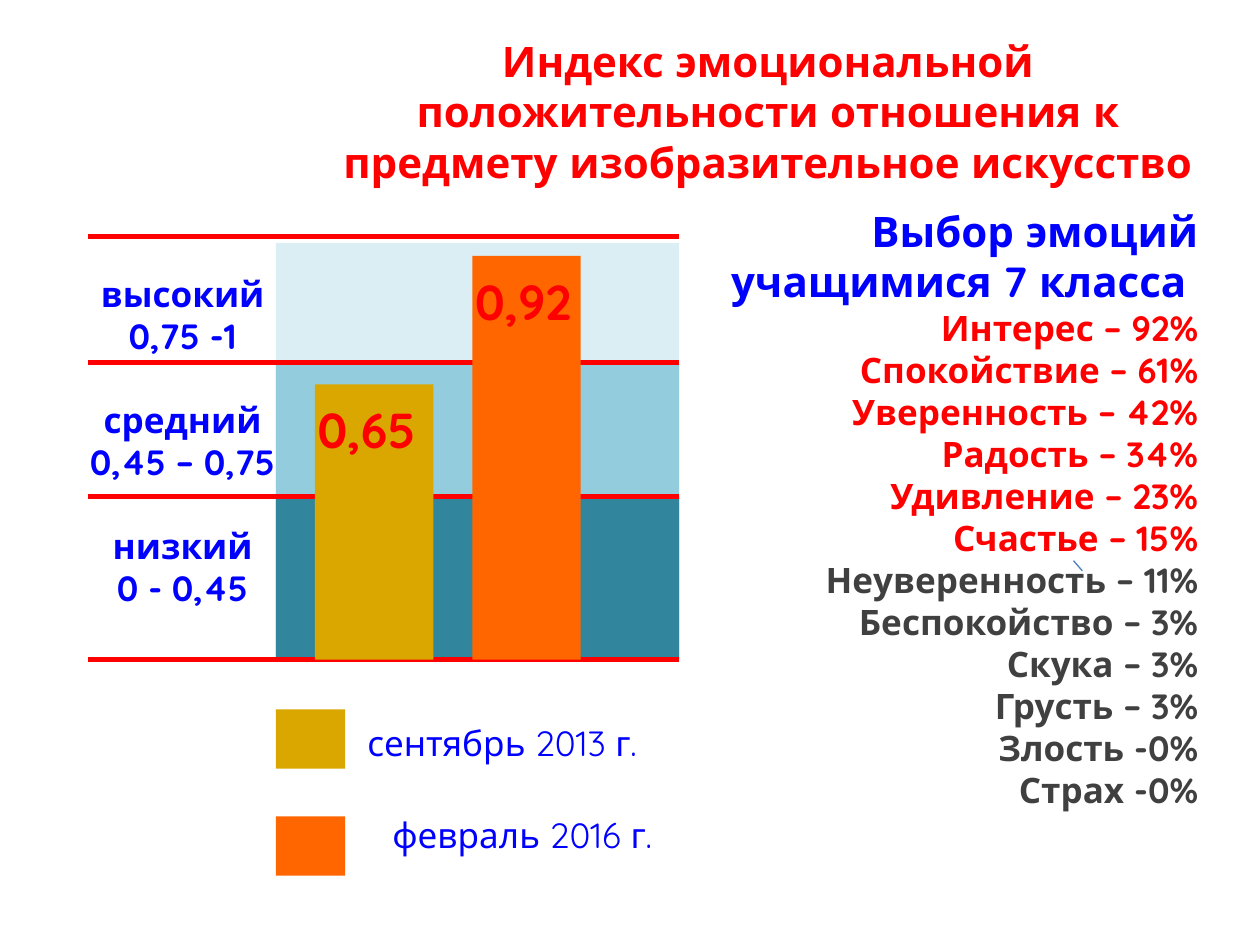
from lxml import etree
from pptx import Presentation
from pptx.dml.color import RGBColor
from pptx.enum.shapes import MSO_CONNECTOR, MSO_SHAPE
from pptx.enum.text import MSO_ANCHOR, MSO_AUTO_SIZE, PP_ALIGN
from pptx.oxml.ns import qn
from pptx.util import Inches, Pt

LEFT, CENTER, RIGHT = PP_ALIGN.LEFT, PP_ALIGN.CENTER, PP_ALIGN.RIGHT
TOP, NO_FIT = MSO_ANCHOR.TOP, MSO_AUTO_SIZE.NONE
RECTANGLE, STRAIGHT = MSO_SHAPE.RECTANGLE, MSO_CONNECTOR.STRAIGHT

THEME = {
    "font": "Quicksand",
    "red": "FF0000", "blue": "0000FF", "gray": "404040", "mark": "4B7EBC",
    "high": "DBEEF4", "middle": "93CDDD", "low": "31859C",
    "september": "DAA600", "february": "FF6600",
    "heading": 24, "text": 20, "value": 28,
}

presentation = Presentation()
presentation.slide_width, presentation.slide_height = Inches(10), Inches(7.5)
slide = presentation.slides.add_slide(presentation.slide_layouts[1])

# Grid of 100 columns by 75 rows
COLUMN = presentation.slide_width // 100
ROW = presentation.slide_height // 75


def write(shape, box, lines, align):
    """Place a text shape and fill it with (text, size, color, bold, gap) lines."""
    shape.left, shape.width = int(box[0] * COLUMN), int(box[2] * COLUMN)
    shape.top, shape.height = int(box[1] * ROW), int(box[3] * ROW)
    frame = shape.text_frame
    frame.word_wrap, frame.auto_size, frame.vertical_anchor = True, NO_FIT, TOP
    for number, (text, size, color, bold, gap) in enumerate(lines):
        paragraph = frame.add_paragraph() if number else frame.paragraphs[0]
        properties = paragraph._p.get_or_add_pPr()
        properties.set("marL", "0")
        properties.set("indent", "0")
        etree.SubElement(properties, qn("a:buNone"))
        paragraph.alignment = align
        paragraph.space_before = Pt(gap)
        run = paragraph.add_run()
        run.text = text
        style = {"name": THEME["font"], "size": Pt(THEME[size]), "bold": bold}
        for name, value in style.items():
            setattr(run.font, name, value)
        run.font.color.rgb = RGBColor.from_string(THEME[color])


def draw(box, color, width=None):
    """Draw a filled rectangle, or a line between two points if a width is given."""
    left, top, third, fourth = (
        int(value * unit) for value, unit in zip(box, (COLUMN, ROW, COLUMN, ROW)))
    rgb = RGBColor.from_string(THEME[color])
    if width:
        line = slide.shapes.add_connector(STRAIGHT, left, top, third, fourth)
        line.line.color.rgb, line.line.width = rgb, Pt(width)
        etree.SubElement(line._element.spPr, qn("a:effectLst"))
        return
    shape = slide.shapes.add_shape(RECTANGLE, left, top, third, fourth)
    shape.shadow.inherit = False
    shape.fill.solid()
    shape.fill.fore_color.rgb = rgb
    shape.line.fill.background()


# Title
title = "Индекс эмоциональной положительности отношения к предмету изобразительное искусство"
write(slide.shapes.title, (25.8, 2.3, 70.3, 13.1),
      [(title, "heading", "red", True, 0)], CENTER)

# List of emotions
positive = ["Интерес – 92%", "Спокойствие – 61%", "Уверенность – 42%",
            "Радость – 34%", "Удивление – 23%", "Счастье – 15%"]
negative = ["Неуверенность – 11%", "Беспокойство – 3%", "Скука – 3%",
            "Грусть – 3%", "Злость -0%", "Страх -0%"]
emotions = [("Выбор эмоций учащимися 7 класса ", "heading", "blue", True, 0)]
for names, color in ((positive, "red"), (negative, "gray")):
    emotions += [(name, "text", color, True, 0) for name in names]
write(slide.placeholders[1], (57, 15.8, 39.1, 49.5), emotions, RIGHT)
draw((85.2, 44.5, 85.9, 45.3), "mark", 0.75)

# Names of the levels
levels = [("высокий", "0,75 -1"), ("средний", "0,45 – 0,75"), ("низкий", "0 - 0,45")]
labels = []
for number, (name, limits) in enumerate(levels):
    labels.append((name, "text", "blue", True, 24 if number else 0))
    labels.append((limits, "text", "blue", True, 0))
write(slide.shapes.add_textbox(0, 0, 0, 0), (5.5, 21.1, 18, 27.9), labels, CENTER)

# Bands and borders of the levels
BASE = 52.35
for top, color in ((19.3, "high"), (28.8, "middle"), (39.4, "low")):
    draw((21.9, top, 32, BASE - top), color)
for height in (18.75, 28.8, 39.4, BASE):
    draw((7, height, 53.9, height), "red", 3)

# Bars with their values
bars = [("0,65", 25, 30.5, 9.4, "september"), ("0,92", 37.5, 20.3, 8.6, "february")]
for value, left, top, width, color in bars:
    draw((left, top, width, BASE - top), color)
    write(slide.shapes.add_textbox(0, 0, 0, 0), (left - 0.8, top + 0.75, 10.9, 5.7),
          [(value, "value", "red", True, 0)], LEFT)

# Legend
legend = [("сентябрь 2013 г.", 56.3, 24.2, 56.8, "september"),
          ("февраль 2016 г.", 64.8, 25.8, 64.1, "february")]
for label, top, text_left, text_top, color in legend:
    draw((21.9, top, 5.5, 4.7), color)
    write(slide.shapes.add_textbox(0, 0, 0, 0), (text_left, text_top, 31.3, 4.4),
          [(label, "text", "blue", False, 0)], CENTER)

presentation.save("out.pptx")
